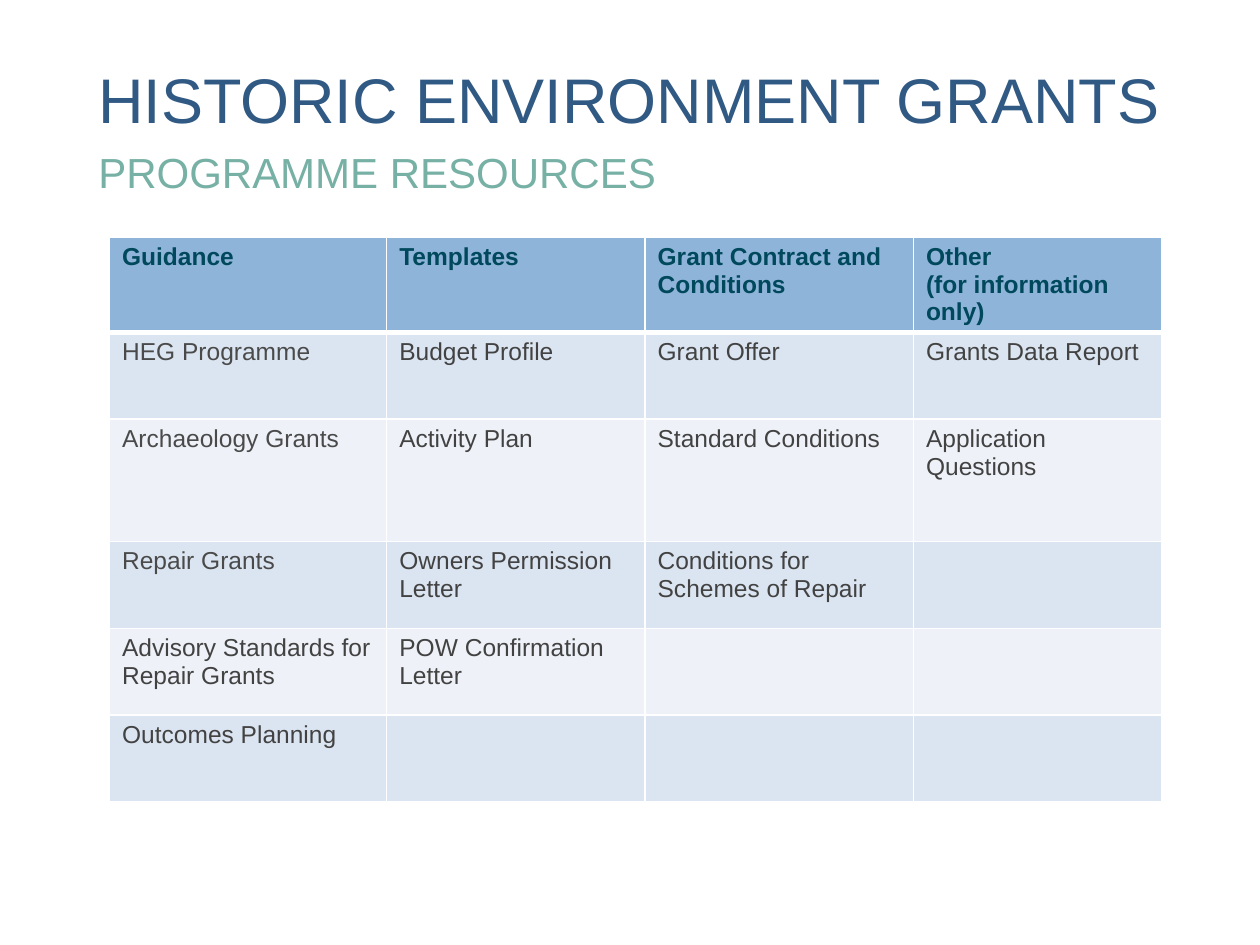
"""Build the programme resources slide with its table of grant documents."""
from lxml import etree
from pptx import Presentation
from pptx.dml.color import RGBColor
from pptx.enum.text import MSO_ANCHOR, MSO_AUTO_SIZE, PP_ALIGN
from pptx.oxml.ns import qn
from pptx.util import Pt

LEFT, TOP, FIXED = PP_ALIGN.LEFT, MSO_ANCHOR.TOP, MSO_AUTO_SIZE.NONE
NAVY = RGBColor(0x30, 0x59, 0x83)
GREEN = RGBColor(0x77, 0xB0, 0xA4)
TEAL = RGBColor(0x00, 0x48, 0x5B)
GREY = RGBColor(0x4A, 0x4A, 0x4A)
DARK = RGBColor(0x42, 0x42, 0x42)
WHITE = RGBColor(0xFF, 0xFF, 0xFF)
BLUE = RGBColor(0x8F, 0xB4, 0xD9)
BANDS = RGBColor(0xEE, 0xF2, 0xF8), RGBColor(0xDB, 0xE5, 0xF1)

WIDTHS = 158.4, 147.6, 153.4, 141.8
HEIGHTS = 49.7, 49.7, 69.8, 49.7, 49.7, 49.7
ROWS = (
    ("Guidance", "Templates", "Grant Contract and Conditions",
     "Other\n(for information only)"),
    ("HEG Programme", "Budget Profile", "Grant Offer", "Grants Data Report"),
    ("Archaeology Grants", "Activity Plan", "Standard Conditions",
     "Application Questions"),
    ("Repair Grants", "Owners Permission Letter",
     "Conditions for Schemes of Repair", ""),
    ("Advisory Standards for Repair Grants", "POW Confirmation Letter", "", ""),
    ("Outcomes Planning", "", "", ""),
)


def apply(target, values):
    """Set each named format value on the target."""
    for name, value in values.items():
        setattr(target, name, value)


def style(para, size, color, bold=False):
    """Set the font of a paragraph."""
    apply(para.font, {"name": "Arial", "size": Pt(size), "bold": bold})
    para.font.color.rgb = color


def heading(shape, text, box, size, color, after=0):
    """Place and format a one-line heading."""
    sides = "left", "top", "width", "height"
    apply(shape, {side: Pt(value) for side, value in zip(sides, box)})
    frame = shape.text_frame
    apply(frame, {"margin_left": 0, "margin_top": 0, "margin_right": 0,
                  "margin_bottom": 0, "word_wrap": True,
                  "auto_size": FIXED, "vertical_anchor": TOP})
    frame.text = text
    para = frame.paragraphs[0]
    apply(para, {"alignment": LEFT, "line_spacing": 0.9,
                 "space_before": Pt(0), "space_after": Pt(after)})
    style(para, size, color)


def border(cell, side, width):
    """Draw one white edge of a cell."""
    props = cell._tc.get_or_add_tcPr()
    line = etree.SubElement(props, qn(f"a:ln{side}"), w=str(Pt(width)))
    fill = etree.SubElement(line, qn("a:solidFill"))
    etree.SubElement(fill, qn("a:srgbClr"), val=str(WHITE))


def fill_cell(cell, text, row, col):
    """Write a cell and give it the look of its row and column."""
    head = row == 0
    for side in "LRTB":
        thick = head and side == "B" or row == 1 and side == "T"
        border(cell, side, 3 if thick else 1)
    cell.fill.solid()
    cell.fill.fore_color.rgb = BLUE if head else BANDS[row % 2]
    cell.text = text
    ink = TEAL if head else GREY if col == 0 and row < 4 else DARK
    for para in cell.text_frame.paragraphs:
        style(para, 14, ink, head)


def add_grid(slide):
    """Add the table of resources."""
    frame = slide.shapes.add_table(
        len(ROWS), len(WIDTHS), Pt(62.6), Pt(135.4),
        Pt(sum(WIDTHS)), Pt(sum(HEIGHTS)))
    table = frame.table
    for column, width in zip(table.columns, WIDTHS):
        column.width = Pt(width)
    for row, height in enumerate(HEIGHTS):
        table.rows[row].height = Pt(height)
        for col, text in enumerate(ROWS[row]):
            fill_cell(table.cell(row, col), text, row, col)


def main():
    """Build and save the slide."""
    deck = Presentation()
    apply(deck, {"slide_width": Pt(720), "slide_height": Pt(540)})
    slide = deck.slides.add_slide(deck.slide_layouts[5])
    heading(slide.shapes.title, "HISTORIC ENVIRONMENT GRANTS",
            (56.2, 39.6, 628.6, 47.5), 36, NAVY)
    label = slide.shapes.add_textbox(0, 0, 0, 0)
    heading(label, "PROGRAMME RESOURCES",
            (56.2, 87.1, 629.3, 31), 24, GREEN, 6)
    add_grid(slide)
    deck.save("out.pptx")


if __name__ == "__main__":
    main()
